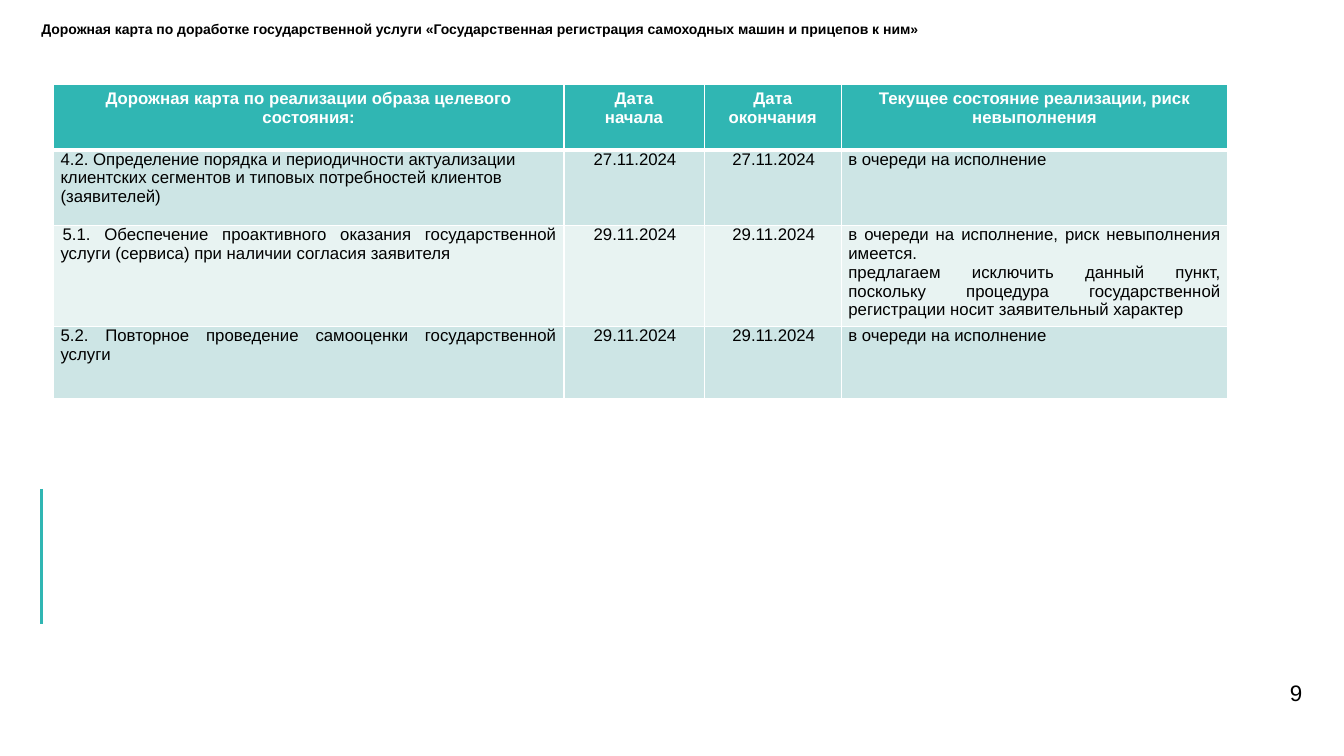
from dataclasses import dataclass

from lxml.etree import SubElement
from pptx import Presentation
from pptx.dml.color import RGBColor as RGB
from pptx.enum.shapes import MSO_CONNECTOR as CONNECTOR
from pptx.enum.text import MSO_ANCHOR as ANCHOR, PP_ALIGN as ALIGN
from pptx.oxml.ns import qn
from pptx.util import Pt


@dataclass(frozen=True)
class Theme:
    font: str = "Arial"
    text: str = "000000"
    white: str = "FFFFFF"
    accent: str = "30B6B3"
    bands: tuple = ("CDE5E5", "E8F3F2")
    title_size: float = 10
    table_size: float = 12
    number_size: float = 16


THEME = Theme()
TITLE = ("Дорожная карта по доработке государственной услуги "
         "«Государственная регистрация самоходных машин и прицепов к ним»")
HEADER = ("Дорожная карта по реализации образа целевого состояния:",
          "Дата\nначала", "Дата окончания",
          "Текущее состояние реализации, риск невыполнения")
QUEUED = "в очереди на исполнение"
# Task, date (start and end coincide), state, task alignment, task indent
TASKS = (
    ("4.2. Определение порядка и периодичности актуализации клиентских "
     "сегментов и типовых потребностей клиентов (заявителей)",
     "27.11.2024", QUEUED, ALIGN.LEFT, 0),
    ("5.1. Обеспечение проактивного оказания государственной услуги "
     "(сервиса) при наличии согласия заявителя",
     "29.11.2024", QUEUED + ", риск невыполнения имеется.\n"
     "предлагаем исключить данный пункт, поскольку процедура "
     "государственной регистрации носит заявительный характер",
     ALIGN.JUSTIFY, 1.44),
    ("5.2. Повторное проведение самооценки государственной услуги",
     "29.11.2024", QUEUED, ALIGN.JUSTIFY, 0),
)
COLUMN_WIDTHS = (364.6, 100.2, 98, 276)
ROW_HEIGHTS = (47, 54, 67, 52)
CELL_INSETS = dict(margin_left=Pt(5.04), margin_right=Pt(5.04),
                   margin_top=0, margin_bottom=0)


def apply(target, formats):
    for name, value in formats.items():
        setattr(target, name, value)


def write(frame, text, size, color=THEME.text, bold=False,
          align=ALIGN.LEFT, indent=0, spacing=None):
    frame.text = text
    for paragraph in frame.paragraphs:
        apply(paragraph, dict(alignment=align, line_spacing=spacing))
        if indent:
            properties = paragraph._p.get_or_add_pPr()
            properties.set("marL", "0")
            properties.set("indent", str(int(Pt(indent))))
        apply(paragraph.font, dict(name=THEME.font, size=Pt(size), bold=bold))
        paragraph.font.color.rgb = RGB.from_string(color)


def add_label(slide, box, text, size, anchor=ANCHOR.TOP, **style):
    frame = slide.shapes.add_textbox(*map(Pt, box)).text_frame
    apply(frame, dict(word_wrap=True, vertical_anchor=anchor, margin_left=0,
                      margin_right=0, margin_top=0, margin_bottom=0))
    write(frame, text, size, **style)


def style_cell(cell, fill, bottom=1):
    # Borders come before the fill in the cell properties
    properties = cell._tc.get_or_add_tcPr()
    for side, width in dict(L=1, R=1, T=1, B=bottom).items():
        line = SubElement(properties, qn(f"a:ln{side}"), w=str(int(Pt(width))))
        solid = SubElement(line, qn("a:solidFill"))
        SubElement(solid, qn("a:srgbClr"), val=THEME.white)
    cell.fill.solid()
    cell.fill.fore_color.rgb = RGB.from_string(fill)


def add_roadmap(slide, box):
    left, top = box
    table = slide.shapes.add_table(
        len(ROW_HEIGHTS), len(COLUMN_WIDTHS), Pt(left), Pt(top),
        Pt(sum(COLUMN_WIDTHS)), Pt(sum(ROW_HEIGHTS))).table
    for column, width in zip(table.columns, COLUMN_WIDTHS):
        column.width = Pt(width)
    for row, height in zip(table.rows, ROW_HEIGHTS):
        row.height = Pt(height)

    # Heading row
    for cell, heading in zip(table.rows[0].cells, HEADER):
        style_cell(cell, THEME.accent, bottom=3)
        write(cell.text_frame, heading, THEME.table_size, THEME.white,
              bold=True, align=ALIGN.CENTER)

    # Task rows in alternating bands
    for index, (task, date, state, align, indent) in enumerate(TASKS):
        dated = (date, ALIGN.CENTER, 1.44)
        entries = ((task, align, indent), dated, dated,
                   (state, ALIGN.JUSTIFY, 0))
        for cell, entry in zip(table.rows[index + 1].cells, entries):
            text, entry_align, entry_indent = entry
            style_cell(cell, THEME.bands[index % 2])
            apply(cell, CELL_INSETS)
            write(cell.text_frame, text, THEME.table_size,
                  align=entry_align, indent=entry_indent)


def add_side_rule(slide, box):
    left, top, height = box
    rule = slide.shapes.add_connector(
        CONNECTOR.STRAIGHT, Pt(left), Pt(top), Pt(left), Pt(top + height))
    rule.line.width = Pt(2.25)
    rule.line.color.rgb = RGB.from_string(THEME.accent)
    SubElement(rule._element.spPr, qn("a:effectLst"))


def add_roadmap_slide(deck, number):
    slide = deck.slides.add_slide(deck.slide_layouts[6])
    add_label(slide, (29.5, 15.8, 795.6, 28), TITLE, THEME.title_size,
              bold=True, spacing=0.9)
    add_label(slide, (854, 479.5, 76.2, 31), str(number), THEME.number_size,
              ANCHOR.MIDDLE, align=ALIGN.RIGHT)
    add_side_rule(slide, (29.5, 349.2, 96.5))
    add_roadmap(slide, (38.2, 60))


def main():
    deck = Presentation()
    apply(deck, dict(slide_width=Pt(960), slide_height=Pt(540)))
    add_roadmap_slide(deck, 9)
    deck.save("out.pptx")


if __name__ == "__main__":
    main()
